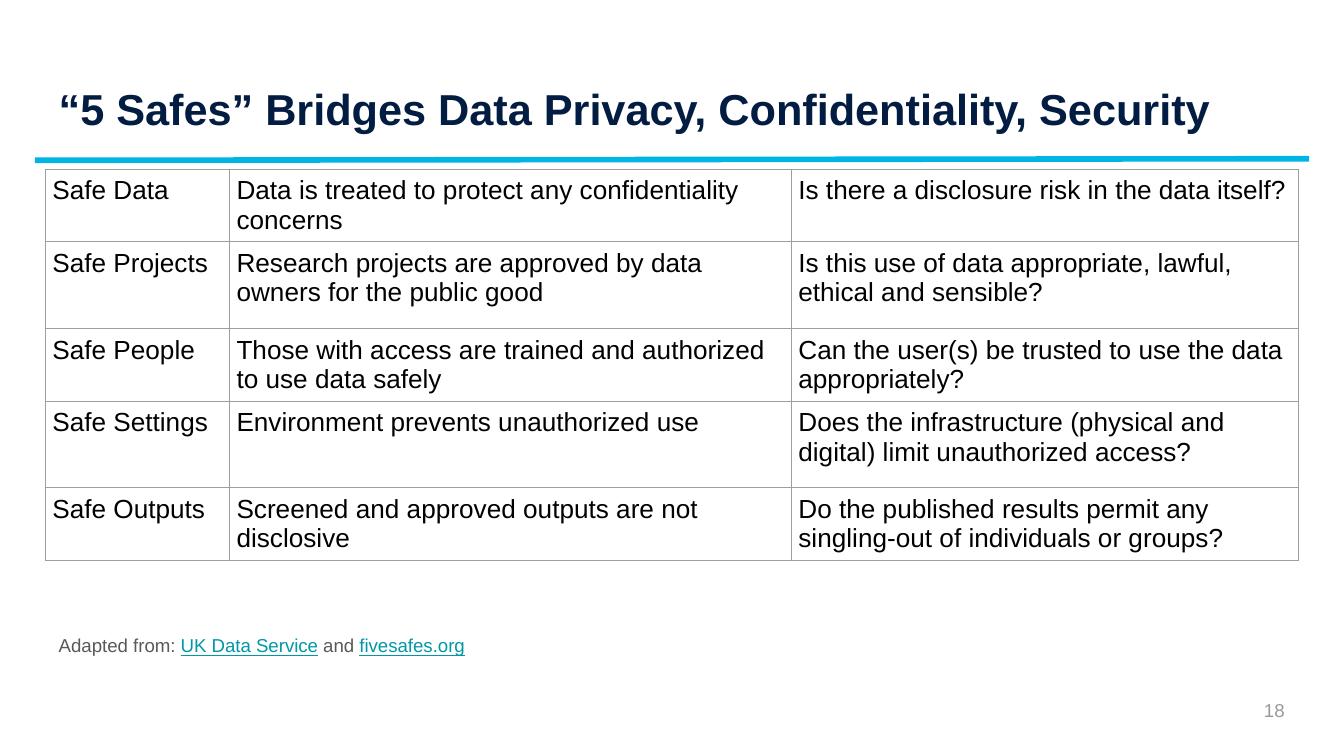
from lxml import etree
from pptx import Presentation
from pptx import util as u
from pptx.dml.color import RGBColor
from pptx.enum import shapes, text
from pptx.oxml.ns import qn

NAVY = RGBColor(0x02, 0x1C, 0x42)
CYAN = RGBColor(0x00, 0xB5, 0xE3)
TEAL = RGBColor(0x00, 0x97, 0xA7)
BLACK = RGBColor(0x00, 0x00, 0x00)
DARK_GRAY = RGBColor(0x59, 0x59, 0x59)
MID_GRAY = RGBColor(0x99, 0x99, 0x99)
BORDER_GRAY = RGBColor(0x9E, 0x9E, 0x9E)

SAFES = [
    ("Safe Data", "Data is treated to protect any confidentiality concerns",
     "Is there a disclosure risk in the data itself?"),
    ("Safe Projects", "Research projects are approved by data owners for the public good",
     "Is this use of data appropriate, lawful, ethical and sensible?"),
    ("Safe People", "Those with access are trained and authorized to use data safely",
     "Can the user(s) be trusted to use the data appropriately?"),
    ("Safe Settings", "Environment prevents unauthorized use",
     "Does the infrastructure (physical and digital) limit unauthorized access?"),
    ("Safe Outputs", "Screened and approved outputs are not disclosive",
     "Do the published results permit any singling-out of individuals or groups?"),
]
COL_WIDTHS = [3.48, 10.62, 9.58]
ROW_HEIGHTS = [1.36, 1.64, 1.36, 1.64, 1.36]


class SlideBuilder:
    font = "Arial"
    inset = u.Cm(0.25)
    cell_inset = u.Cm(0.13)

    def __init__(self, prs):
        self.s = prs.slides.add_slide(prs.slide_layouts[5])

    def add_runs(self, p, runs, align=text.PP_ALIGN.LEFT):
        """Fill a paragraph from (words, font values) pairs."""
        p.alignment = align
        for words, values in runs:
            r = p.add_run()
            r.text = words
            r.font.name = self.font
            for name, value in values.items():
                if name == "color":
                    r.font.color.rgb = value
                else:
                    setattr(r.font, name, value)

    def frame(self, sp, box, anchor):
        sp.left, sp.top, sp.width, sp.height = map(u.Cm, box)
        tf = sp.text_frame
        values = {"word_wrap": True, "auto_size": text.MSO_AUTO_SIZE.NONE,
                  "vertical_anchor": anchor}
        values.update({f"margin_{side}": self.inset
                       for side in ("left", "top", "right", "bottom")})
        for name, value in values.items():
            setattr(tf, name, value)
        return tf.paragraphs[0]

    def title(self, words, box):
        p = self.frame(self.s.shapes.title, box, text.MSO_ANCHOR.MIDDLE)
        self.add_runs(p, [(words, {"size": u.Pt(23.2), "bold": True, "color": NAVY})])

    def label(self, runs, box, anchor=text.MSO_ANCHOR.TOP, align=text.PP_ALIGN.LEFT):
        sp = self.s.shapes.add_textbox(*map(u.Cm, box))
        self.add_runs(self.frame(sp, box, anchor), runs, align)

    def rule(self, ends, color, width):
        ln = self.s.shapes.add_connector(shapes.MSO_CONNECTOR.STRAIGHT, *map(u.Cm, ends))
        ln.line.color.rgb = color
        ln.line.width = u.Pt(width)
        etree.SubElement(ln._element.spPr, qn("a:effectLst"))

    def border(self, cell, color, width):
        tc_pr = cell._tc.get_or_add_tcPr()
        for i, side in enumerate(("lnL", "lnR", "lnT", "lnB")):
            ln = etree.Element(qn(f"a:{side}"), w=str(u.Pt(width)))
            fill = etree.SubElement(ln, qn("a:solidFill"))
            etree.SubElement(fill, qn("a:srgbClr"), val=str(color))
            tc_pr.insert(i, ln)

    def table(self, rows, left, top, widths, heights):
        sp = self.s.shapes.add_table(len(rows), len(widths), u.Cm(left), u.Cm(top),
                                     u.Cm(sum(widths)), u.Cm(sum(heights)))
        tbl = sp.table
        tbl.first_row = tbl.horz_banding = False
        for col, width in zip(tbl.columns, widths):
            col.width = u.Cm(width)
        for row, height, words in zip(tbl.rows, heights, rows):
            row.height = u.Cm(height)
            for cell, content in zip(row.cells, words):
                for side in ("left", "top", "right", "bottom"):
                    setattr(cell, f"margin_{side}", self.cell_inset)
                cell.fill.background()
                self.border(cell, BORDER_GRAY, 0.75)
                self.add_runs(cell.text_frame.paragraphs[0],
                              [(content, {"size": u.Pt(14), "color": BLACK})])


def main():
    prs = Presentation()
    prs.slide_width, prs.slide_height = u.Cm(25.4), u.Cm(14.29)
    b = SlideBuilder(prs)

    # Heading and rule
    b.rule((0.66, 3.03, 24.74, 3), CYAN, 3)
    b.title("“5 Safes” Bridges Data Privacy, Confidentiality, Security",
            (0.86, 1.25, 23.67, 1.6))

    # Five safes table
    b.table(SAFES, 0.86, 3.2, COL_WIDTHS, ROW_HEIGHTS)

    # Source line
    plain = {"size": u.Pt(10), "color": DARK_GRAY}
    link = {"size": u.Pt(10), "color": TEAL, "underline": True}
    b.label([("Adapted from: ", plain), ("UK Data Service", link),
             (" and ", plain), ("fivesafes.org", link)], (0.86, 11.74, 17.27, 0.84))

    # Page number
    b.label([("18", {"size": u.Pt(10), "color": MID_GRAY})], (23.39, 12.88, 1.14, 1.09),
            text.MSO_ANCHOR.MIDDLE, text.PP_ALIGN.RIGHT)

    prs.save("out.pptx")


if __name__ == "__main__":
    main()
